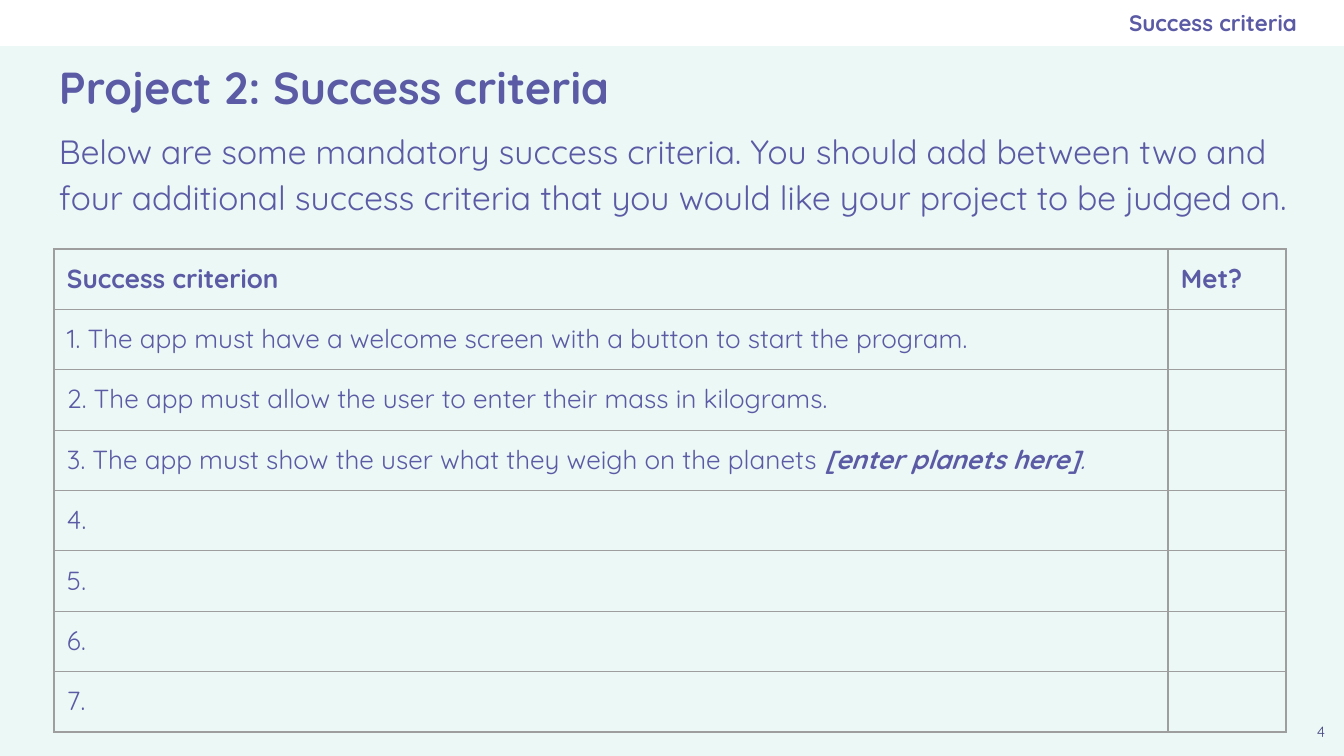
from lxml.etree import SubElement
from pptx import Presentation
from pptx.dml.color import RGBColor
from pptx.enum.shapes import MSO_SHAPE
from pptx.enum.text import MSO_ANCHOR, MSO_AUTO_SIZE, PP_ALIGN
from pptx.oxml.ns import qn
from pptx.util import Emu, Pt

PX_PER_INCH = 134.4
FONT = "Quicksand"
PURPLE, DARK_PURPLE = "5B5BA5", "494985"
MINT, WHITE, GREY = "ECF8F5", "FFFFFF", "9E9E9E"
INSET = 13

TITLE = "Project 2: Success criteria"
SECTION = "Success criteria"
INTRO = ("Below are some mandatory success criteria. You should add between two and "
         "four additional success criteria that you would like your project to be judged on.")
PAGE_NUMBER = "4"
HEADINGS = ["Success criterion", "Met?"]
# Each criterion is a list of (text, bold, italic) spans.
CRITERIA = [
    [("1. The app must have a welcome screen with a button to start the program.", False, False)],
    [("2. The app must allow the user to enter their mass in kilograms.", False, False)],
    [("3. The app must show the user what they weigh on the planets ", False, False),
     ("[enter planets here]", True, True), (".", False, True)],
    *[[(f"{number}.", False, False)] for number in range(4, 8)],
]
TABLE_BOX = (54, 249, 1232, 483)
COLUMN_WIDTHS = [1114, 118]


def px(length):
    return Emu(round(length * 914400 / PX_PER_INCH))


def color(value):
    return RGBColor.from_string(value)


def place(shape, left, top, width, height):
    shape.left, shape.top = px(left), px(top)
    shape.width, shape.height = px(width), px(height)


def add_span(para, text, size, bold=False, italic=False, ink=PURPLE):
    span = para.add_run()
    span.text = text
    font = span.font
    font.name, font.size, font.bold, font.italic = FONT, Pt(size), bold, italic
    font.color.rgb = color(ink)


def write(shape, text, size, bold=False, ink=PURPLE, align=PP_ALIGN.LEFT,
          anchor=MSO_ANCHOR.TOP, right_inset=INSET):
    frame = shape.text_frame
    frame.word_wrap = True
    frame.auto_size = MSO_AUTO_SIZE.NONE
    frame.vertical_anchor = anchor
    frame.margin_left = frame.margin_top = frame.margin_bottom = px(INSET)
    frame.margin_right = px(right_inset)
    para = frame.paragraphs[0]
    para.alignment = align
    add_span(para, text, size, bold, ink=ink)
    return para


def style_cell(cell):
    cell.margin_left = cell.margin_right = px(INSET)
    cell.margin_top = cell.margin_bottom = px(INSET)
    properties = cell._tc.get_or_add_tcPr()
    for side in ("a:lnL", "a:lnR", "a:lnT", "a:lnB"):
        line = SubElement(properties, qn(side), w=str(Pt(0.75)))
        fill = SubElement(line, qn("a:solidFill"))
        SubElement(fill, qn("a:srgbClr"), val=GREY)
    cell.fill.background()


def fill_cell(cell, spans):
    style_cell(cell)
    para = cell.text_frame.paragraphs[0]
    for text, bold, italic in spans:
        add_span(para, text, 14, bold, italic)
    if not spans:  # keeps an empty cell from stretching its row
        SubElement(para._p, qn("a:endParaRPr"), sz="1400")


def add_criteria_table(page):
    rows = [[[(heading, True, False)] for heading in HEADINGS]]
    rows += [[criterion, []] for criterion in CRITERIA]
    left, top, width, height = TABLE_BOX
    table = page.shapes.add_table(len(rows), len(HEADINGS), px(left), px(top),
                                  px(width), px(height)).table
    table.first_row = table.horz_banding = False
    for column, column_width in zip(table.columns, COLUMN_WIDTHS):
        column.width = px(column_width)
    for row, contents in zip(table.rows, rows):
        row.height = px(height / len(rows))
        for cell, spans in zip(row.cells, contents):
            fill_cell(cell, spans)


def main():
    deck = Presentation()
    deck.slide_width, deck.slide_height = px(1344), px(756)
    page = deck.slides.add_slide(deck.slide_layouts[5])
    page.background.fill.solid()
    page.background.fill.fore_color.rgb = color(MINT)

    title = page.shapes.title
    place(title, 46, 36, 1252, 102)
    write(title, TITLE, 24, bold=True, anchor=MSO_ANCHOR.MIDDLE)

    band = page.shapes.add_shape(MSO_SHAPE.RECTANGLE, 0, 0, px(1344), px(46))
    band.shadow.inherit = False
    band.fill.solid()
    band.fill.fore_color.rgb = color(WHITE)
    band.line.fill.background()

    def add_text(left, top, width, height, *content, **style):
        box = page.shapes.add_textbox(px(left), px(top), px(width), px(height))
        return write(box, *content, **style)

    add_text(1298, 710, 46, 46, PAGE_NUMBER, 8, ink=DARK_PURPLE, align=PP_ALIGN.CENTER)
    intro = add_text(46, 112, 1262, 102, INTRO, 18)
    intro.line_spacing = 1.15
    intro.space_after = Pt(16)
    add_text(773, 0, 524, 46, SECTION, 12, bold=True, align=PP_ALIGN.RIGHT,
             anchor=MSO_ANCHOR.MIDDLE, right_inset=0)
    add_criteria_table(page)
    deck.save("out.pptx")


if __name__ == "__main__":
    main()
